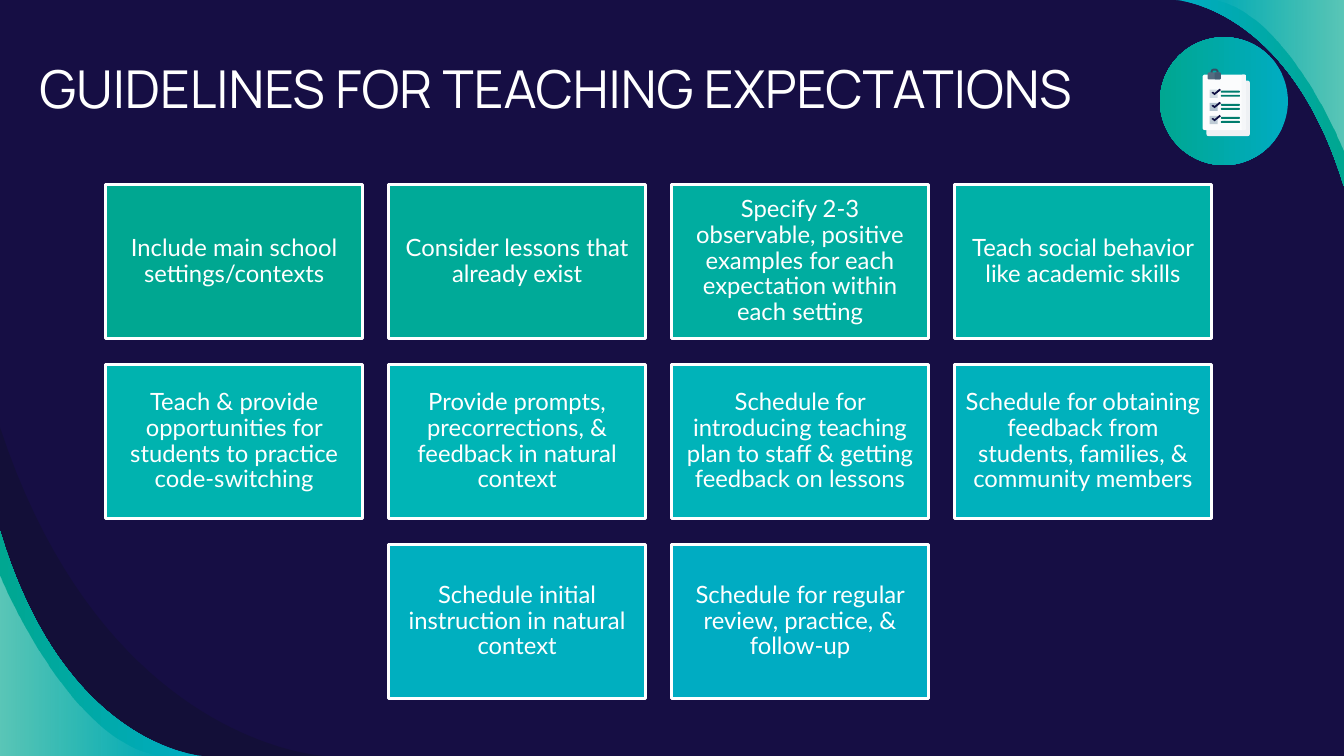
from pptx import Presentation
from pptx.dml.color import RGBColor
from pptx.enum.shapes import MSO_SHAPE
from pptx.enum.text import MSO_ANCHOR, MSO_AUTO_SIZE, PP_ALIGN
from pptx.oxml.ns import qn
from pptx.util import Pt
from lxml.etree import SubElement

TITLE = "GUIDELINES FOR TEACHING EXPECTATIONS"
ROWS = [
    [("Include main school settings/contexts", "00A791"),
     ("Consider lessons that already exist", "00AA98"),
     ("Specify 2-3 observable, positive examples for each expectation within each setting", "00ADA0"),
     ("Teach social behavior like academic skills", "00B0A7")],
    [("Teach & provide opportunities for students to practice code-switching", "00B3AF"),
     ("Provide prompts, precorrections, & feedback in natural context", "00B5B6"),
     ("Schedule for introducing teaching plan to staff & getting feedback on lessons", "00B3B9"),
     ("Schedule for obtaining feedback from students, families, & community members", "00B1BC")],
    [("Schedule initial instruction in natural context", "00AFBF"),
     ("Schedule for regular review, practice, & follow-up", "00ACC2")],
]

WHITE = RGBColor(0xFF, 0xFF, 0xFF)
NAVY = RGBColor(0x16, 0x0E, 0x44)
SHADE = RGBColor(0x12, 0x10, 0x2F)
CYAN = RGBColor(0x00, 0xAC, 0xC2)
GREEN = RGBColor(0x00, 0xA7, 0x91)
BACK = RGBColor(0xEE, 0xF1, 0xF4)
PAPER = RGBColor(0xFB, 0xFC, 0xFD)
EDGE = RGBColor(0xF5, 0xF7, 0xF9)
RULE = RGBColor(0x00, 0x7D, 0x6D)
TICK = RGBColor(0x0D, 0x0F, 0x41)
LOOP = RGBColor(0x34, 0x4D, 0x65)
CLIP = RGBColor(0x54, 0x6C, 0x81)
CLIP_DARK = RGBColor(0x43, 0x5D, 0x74)
BOXES = [RGBColor(0xD1, 0xDB, 0xE2), RGBColor(0xB2, 0xC2, 0xCE), RGBColor(0xBE, 0xCB, 0xD5)]

WIDE, HIGH = 960, 540
LEFT, TOP = 75.4, 131.6
CELL_W, CELL_H = 183.8, 110.3
STEP_X, STEP_Y = 202.1, 128.55
COLS = 4
TICK_X, TICK_Y, TICK_STEP = 864, 64.1, 9.36
TICK_PATH = [(1.4, 2.1), (2.5, 1.4), (3.6, 2.3), (7.1, -0.7), (8.2, 0.2), (3.6, 3.8)]

RIGHT_CORNER, LEFT_CORNER = (WIDE, 0), (0, HIGH)
RIGHT_BAND = [(840, 0), (840, 0), (921, 4.3), (960, 133.2)]
RIGHT_GLOW = [(960, 107.3), (960, 107.3), (919.5, 6.5), (864.7, 0)]
LEFT_SHADE = [(0, 305.3), (74.9, 532.8), (231.8, 540), (231.8, 540)]
LEFT_BAND = [(144.7, 540), (144.7, 540), (46.8, 535), (0, 379.4)]
LEFT_GLOW = [(0, 410.4), (0, 410.4), (49, 532), (115.2, 540)]

deck = Presentation()
deck.slide_width, deck.slide_height = Pt(WIDE), Pt(HIGH)
slide = deck.slides.add_slide(deck.slide_layouts[5])
slide.background.fill.solid()
slide.background.fill.fore_color.rgb = NAVY
shapes = slide.shapes


def paint(shape, color):
    shape.shadow.inherit = False
    shape.line.fill.background()
    shape.fill.solid()
    shape.fill.fore_color.rgb = color
    return shape


def blend(shape, first, last, angle):
    shape.shadow.inherit = False
    shape.line.fill.background()
    shape.fill.gradient()
    shape.fill.gradient_angle = angle
    for stop, color, place in zip(shape.fill.gradient_stops, (first, last), (0, 1)):
        stop.color.rgb = color
        stop.position = place


def fade(shape, levels):
    marks = shape.element.spPr.iter(qn("a:srgbClr"))
    for mark, level in zip(list(marks), levels):
        SubElement(mark, qn("a:alpha")).set("val", str(level * 1000))


def outline(points):
    spots = [(Pt(x), Pt(y)) for x, y in points]
    pen = shapes.build_freeform(*spots[0], scale=1.0)
    pen.add_line_segments(spots[1:], close=True)
    return pen.convert_to_shape()


def bend(curve, corner, count=40):
    points = []
    for i in range(count + 1):
        t = i / count
        parts = ((1 - t) ** 3, 3 * t * (1 - t) ** 2, 3 * t * t * (1 - t), t ** 3)
        points.append([sum(p * spot[k] for p, spot in zip(parts, curve)) for k in (0, 1)])
    return outline(points + [corner])


def block(kind, x, y, w, h):
    return shapes.add_shape(kind, Pt(x), Pt(y), Pt(w), Pt(h))


def sheet(x, y, w, h, color, round_by=0.05):
    shape = paint(block(MSO_SHAPE.ROUNDED_RECTANGLE, x, y, w, h), color)
    shape.adjustments[0] = round_by
    return shape


def format_text(frame, size, face, align, inset):
    frame.word_wrap = True
    frame.auto_size = MSO_AUTO_SIZE.NONE
    frame.margin_left = frame.margin_right = Pt(inset)
    frame.margin_top = frame.margin_bottom = Pt(inset)
    para = frame.paragraphs[0]
    para.alignment = align
    font = para.runs[0].font
    font.size, font.name = Pt(size), face
    font.color.rgb = WHITE
    return para


def draw_corners():
    blend(bend(RIGHT_BAND, RIGHT_CORNER), CYAN, GREEN, 0)
    fade(paint(bend(LEFT_SHADE, LEFT_CORNER), SHADE), [54])
    blend(bend(LEFT_BAND, LEFT_CORNER), CYAN, GREEN, 180)
    for curve, corner, angle in ((RIGHT_GLOW, RIGHT_CORNER, 0), (LEFT_GLOW, LEFT_CORNER, 180)):
        glow = bend(curve, corner)
        blend(glow, WHITE, WHITE, angle)
        fade(glow, [0, 36])


def draw_title():
    title = shapes.title
    title.left, title.top, title.width, title.height = Pt(20.9), Pt(33.1), Pt(866.2), Pt(66.2)
    title.text_frame.text = TITLE
    title.text_frame.vertical_anchor = MSO_ANCHOR.TOP
    format_text(title.text_frame, 37.3, "Manrope", PP_ALIGN.LEFT, 7.2)


def draw_badge():
    blend(block(MSO_SHAPE.OVAL, 828.6, 26.6, 91.4, 91.4), CYAN, GREEN, 180)
    loop = sheet(865.4, 49.7, 4.4, 5, LOOP, 0.4)
    loop.fill.background()
    loop.line.color.rgb = LOOP
    loop.line.width = Pt(1.4)
    sheet(861.8, 57.6, 31, 39.6, BACK)
    sheet(859, 53.3, 31, 39.6, PAPER)
    sheet(887, 53.3, 3, 39.6, EDGE, 0.3)
    for i, color in enumerate(BOXES):
        y = TICK_Y + i * TICK_STEP
        sheet(TICK_X, y, 5.8, 5.8, color)
        for drop in (0.7, 3.6):
            sheet(TICK_X + 8, y + drop, 13.7, 1.4, RULE, 0.5)
        paint(outline([(TICK_X + dx, y + dy) for dx, dy in TICK_PATH]), TICK)
    sheet(862.6, 51.8, 9.4, 5, CLIP, 0.2)
    sheet(867.6, 51.8, 4.4, 5, CLIP_DARK, 0.2)


def draw_cells():
    for r, row in enumerate(ROWS):
        start = LEFT + (COLS - len(row)) / 2 * STEP_X
        for c, (text, color) in enumerate(row):
            cell = block(MSO_SHAPE.RECTANGLE, start + c * STEP_X, TOP + r * STEP_Y, CELL_W, CELL_H)
            paint(cell, RGBColor.from_string(color))
            cell.line.color.rgb = WHITE
            cell.line.width = Pt(2)
            cell.text_frame.text = text
            cell.text_frame.vertical_anchor = MSO_ANCHOR.MIDDLE
            format_text(cell.text_frame, 17, "Lato", PP_ALIGN.CENTER, 5).line_spacing = 0.9


draw_corners()
draw_title()
draw_badge()
draw_cells()
deck.save("out.pptx")
